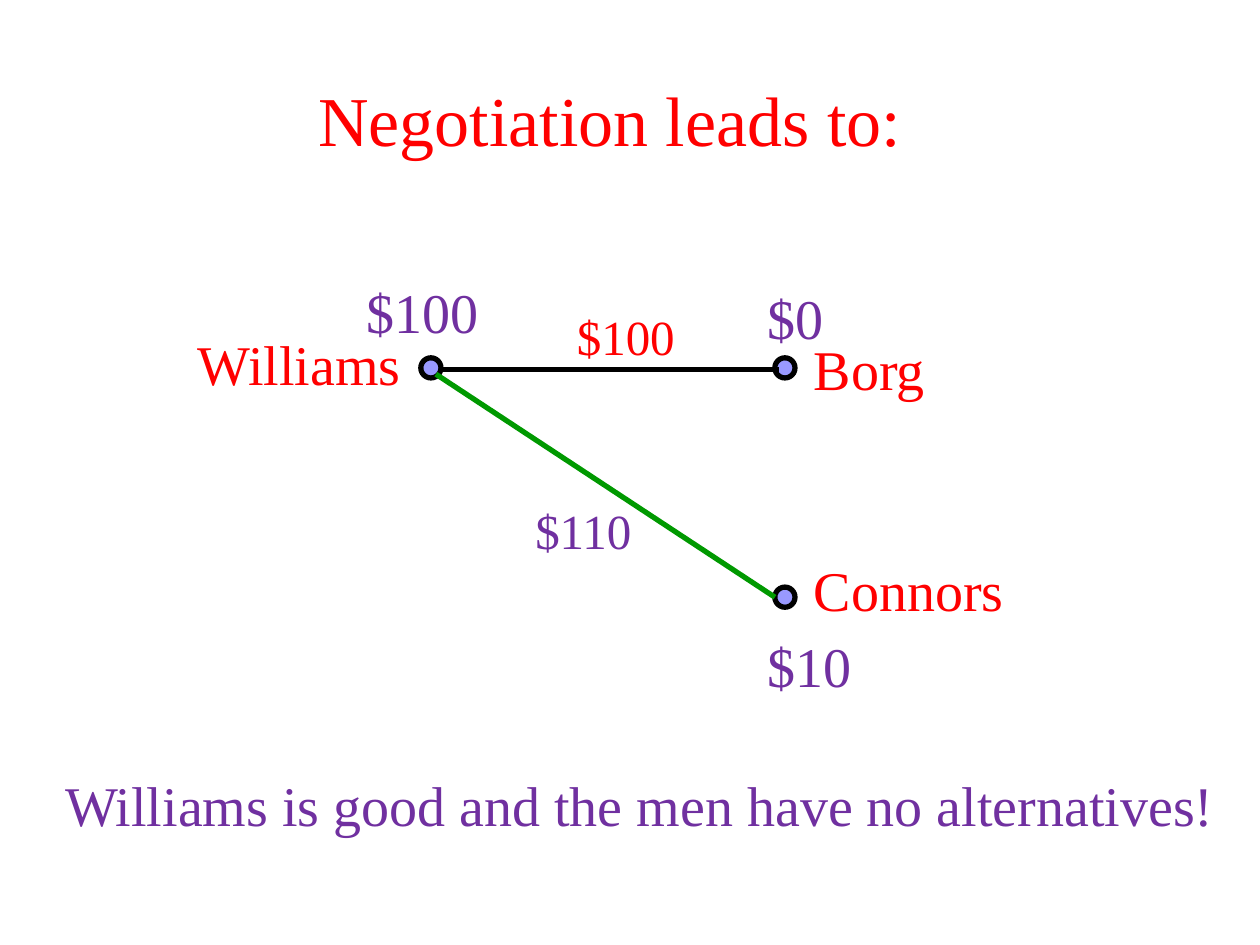
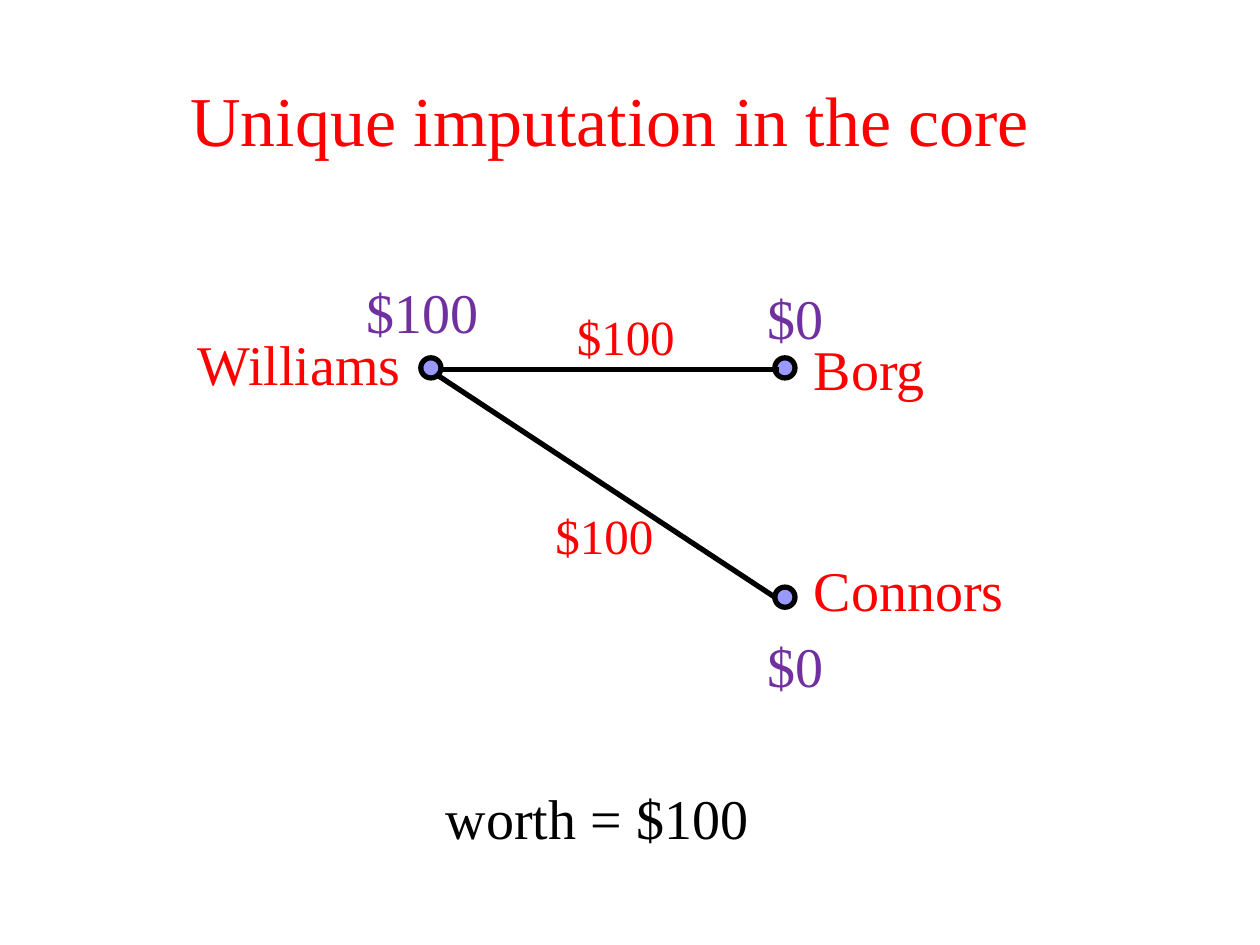
import pptx
import pptx.dml.color
import pptx.enum.shapes
import pptx.enum.text
import pptx.oxml.ns
import pptx.util
from lxml import etree

RED, PURPLE, BLACK, GREEN, LILAC = "FF0000", "7030A0", "000000", "009900", "9999FF"
FONT = "Times New Roman"
COLS, ROWS = 100, 75  # square cells

# Columns and rows of the bargaining graph
LEFT, RIGHT = 33.4, 61.5
TOP, BASE = 28.4, 46.6
DOT = 1.6
NAMES = [("Williams", 14.7, 25.7, 18.3), ("Borg", 63.6, 26.1, 10.9),
         ("Connors", 63.6, 43.6, 17.2)]


def rgb(code):
    return pptx.dml.color.RGBColor.from_string(code)


class Deck:
    def __init__(self):
        self.prs = pptx.Presentation()
        self.prs.slide_width = pptx.util.Inches(10)
        self.prs.slide_height = pptx.util.Inches(7.5)
        self.slide = None

    def cells(self, *spans):
        """Turn alternating column and row counts into lengths."""
        units = self.prs.slide_width / COLS, self.prs.slide_height / ROWS
        return [round(span * units[i % 2]) for i, span in enumerate(spans)]

    def page(self, title):
        self.slide = self.prs.slides.add_slide(self.prs.slide_layouts[6])
        frame = self.text(title, 3.4, 1.9, 90, 15, RED, 40)
        frame.word_wrap = True
        frame.auto_size = pptx.enum.text.MSO_AUTO_SIZE.NONE
        frame.vertical_anchor = pptx.enum.text.MSO_ANCHOR.MIDDLE
        frame.paragraphs[0].alignment = pptx.enum.text.PP_ALIGN.CENTER

    def text(self, words, x, y, w, h=6.4, color=PURPLE, size=32):
        frame = self.slide.shapes.add_textbox(*self.cells(x, y, w, h)).text_frame
        frame.word_wrap = False
        frame.auto_size = pptx.enum.text.MSO_AUTO_SIZE.SHAPE_TO_FIT_TEXT
        par = frame.paragraphs[0]
        par.text = words
        par.font.name = FONT
        par.font.size = pptx.util.Pt(size)
        par.font.color.rgb = rgb(color)
        return frame

    def stroke(self, shape, color):
        shape.line.color.rgb = rgb(color)
        shape.line.width = pptx.util.Pt(3)

    def dot(self, x, y):
        oval = pptx.enum.shapes.MSO_SHAPE.OVAL
        shape = self.slide.shapes.add_shape(oval, *self.cells(x, y, DOT, DOT))
        shape.shadow.inherit = False
        shape.fill.solid()
        shape.fill.fore_color.rgb = rgb(LILAC)
        self.stroke(shape, BLACK)

    def edge(self, x1, y1, x2, y2, color=BLACK):
        kind = pptx.enum.shapes.MSO_CONNECTOR.STRAIGHT
        line = self.slide.shapes.add_connector(kind, *self.cells(x1, y1, x2, y2))
        etree.SubElement(line._element.spPr, pptx.oxml.ns.qn("a:effectLst"))
        self.stroke(line, color)

    def graph(self, color, worth, gain):
        """Draw the players; worth labels the lower edge, gain is Connors's share."""
        for x, y in [(LEFT, TOP), (RIGHT, BASE), (RIGHT, TOP)]:
            self.dot(x, y)
        self.edge(LEFT + DOT, 29.3, 61.8, 29.3)
        self.edge(34.6, 29.7, RIGHT, BASE + DOT / 2, color)
        self.text("$100", 44.8, 23.8, 9.9, 5.7, RED, 28)
        self.text(*worth, size=28)
        for name, x, y, w in NAMES:
            self.text(name, x, y, w, color=RED)
        self.text("$100", 28.1, 21.5, 11)
        self.text("$0", 59.9, 22, 6.5)
        words, width = gain
        self.text(words, 59.9, 49.6, width)


def main():
    deck = Deck()
    deck.page("Negotiation leads to:")
    deck.graph(GREEN, ("$110", 41.5, 39.2, 9.7, 5.7, PURPLE), ("$10", 8.8))
    deck.text("Williams is good and the men have no alternatives!", 4.2, 60.7, 94.1)

    deck.page("Unique imputation in the core")
    deck.graph(BLACK, ("$100", 43.1, 39.6, 9.9, 5.7, RED), ("$0", 6.5))
    deck.text("worth = $100", 34.4, 61.7, 26.2, color=BLACK)
    deck.prs.save("out.pptx")


if __name__ == "__main__":
    main()
